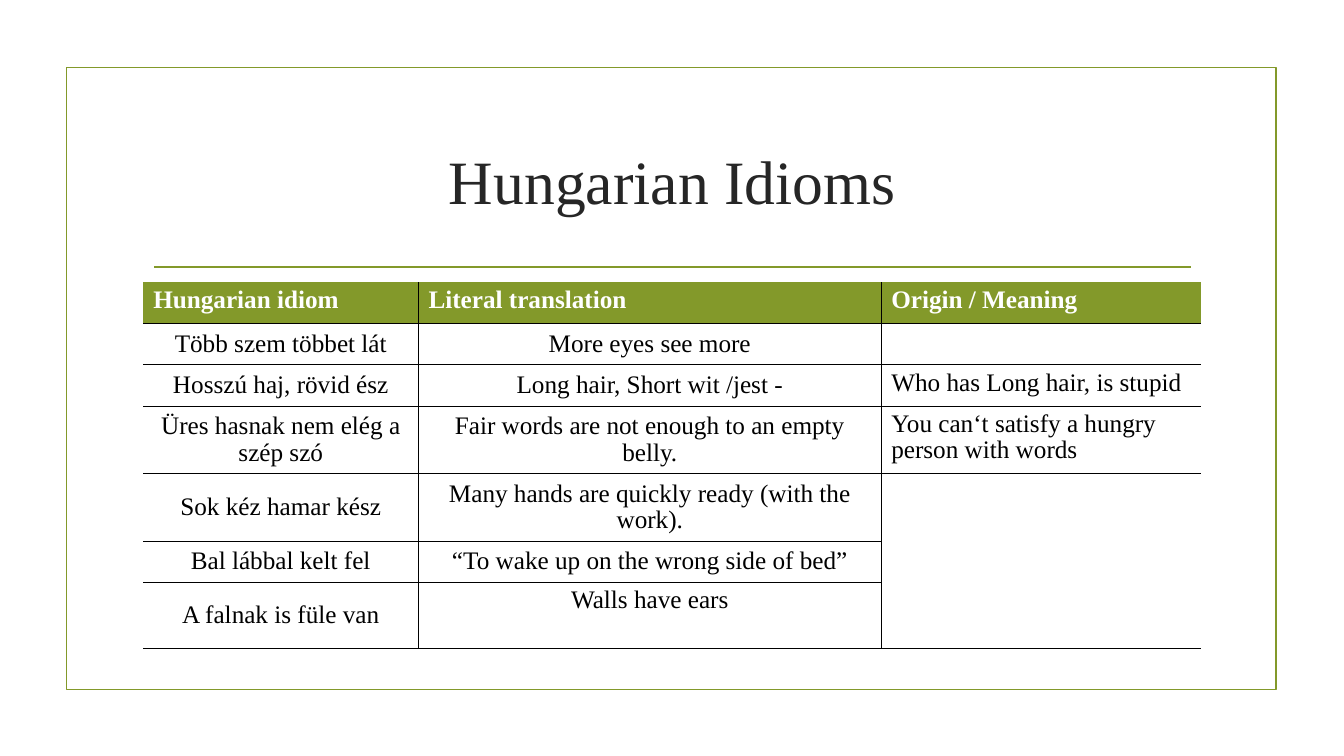
from lxml.etree import SubElement as Sub
from pptx import Presentation
from pptx.dml.color import RGBColor as Rgb
from pptx.enum.shapes import MSO_CONNECTOR as Conn, MSO_SHAPE as Shape
from pptx.enum.text import MSO_ANCHOR as Anchor, PP_ALIGN as Align
from pptx.oxml import parse_xml
from pptx.oxml.ns import nsdecls, qn
from pptx.util import Inches, Pt

HUE = {"green": "83992A", "title": "262626", "black": "000000", "white": "FFFFFF"}
FONT = "Times New Roman"
HEAD = ["Hungarian idiom", "Literal translation", "Origin / Meaning"]
ROWS = [
    ["Több szem többet lát", "More eyes see more", ""],
    ["Hosszú haj, rövid ész", "Long hair, Short wit /jest -", "Who has Long hair, is stupid"],
    ["Üres hasnak nem elég a szép szó", "Fair words are not enough to an empty belly.",
     "You can‘t satisfy a hungry person with words"],
    ["Sok kéz hamar kész", "Many hands are quickly ready (with the work).", ""],
    ["Bal lábbal kelt fel", "“To wake up on the wrong side of bed”", ""],
    ["A falnak is füle van", "Walls have ears", ""],
]
WIDE = [2.73, 4.59, 3.17]
LOW, TALL = 0.41, 0.65
HIGH = [LOW, LOW, LOW, TALL, TALL, LOW, TALL]


def write(frame, text, size=18, color="black", bold=False, align=Align.LEFT, space=None):
    para = frame.paragraphs[0]
    para.alignment = align
    para.line_spacing = space
    font = para.font
    if text:
        run = para.add_run()
        run.text = text
        font = run.font
    font.name, font.size, font.bold = FONT, Pt(size), bold
    font.color.rgb = Rgb.from_string(HUE[color])


def edge(cell, sides):
    props = cell._tc.get_or_add_tcPr()
    for spot, side in enumerate("LRTB"):
        line = parse_xml(f'<a:ln{side} {nsdecls("a")} w="{Pt(1)}"/>')
        if side in sides:
            fill = Sub(line, qn("a:solidFill"))
            Sub(fill, qn("a:srgbClr"), val=HUE["black"])
        else:
            Sub(line, qn("a:noFill"))
        props.insert(spot, line)


class Deck:
    def __init__(self):
        self.show = Presentation()
        self.show.slide_width, self.show.slide_height = Inches(13.33), Inches(7.5)
        self.slide = self.show.slides.add_slide(self.show.slide_layouts[6])
        self.color = Rgb.from_string(HUE["green"])
        self.width = Pt(1.25)

    def stroke(self, item):
        item.line.color.rgb = self.color
        item.line.width = self.width

    def frame(self, *box):
        rect = self.slide.shapes.add_shape(Shape.RECTANGLE, *map(Inches, box))
        rect.shadow.inherit = False
        rect.fill.background()
        self.stroke(rect)

    def rule(self, *ends):
        line = self.slide.shapes.add_connector(Conn.STRAIGHT, *map(Inches, ends))
        self.stroke(line)
        Sub(line._element.spPr, qn("a:effectLst"))

    def title(self, text, *box):
        frame = self.slide.shapes.add_textbox(*map(Inches, box)).text_frame
        frame.word_wrap = True
        frame.vertical_anchor = Anchor.MIDDLE
        write(frame, text, size=44, color="title", align=Align.CENTER)

    def table(self, rows, left, top):
        box = map(Inches, (left, top, sum(WIDE), sum(HIGH)))
        grid = self.slide.shapes.add_table(len(rows), len(WIDE), *box).table
        for col, wide in zip(grid.columns, WIDE):
            col.width = Inches(wide)
        for row, high in zip(grid.rows, HIGH):
            row.height = Inches(high)
        for r, texts in enumerate(rows):
            for c, text in enumerate(texts):
                self.cell(grid.cell(r, c), text, r, c)
        # The last three meanings share one empty cell
        grid.cell(4, 2).merge(grid.cell(6, 2))

    def cell(self, cell, text, r, c):
        head = r == 0
        mid = not head and c < 2
        if head:
            cell.fill.solid()
            cell.fill.fore_color.rgb = self.color
        else:
            cell.fill.background()
        edge(cell, "B" + "T" * (r > 0) + "L" * (c > 0) + "R" * (c < 2))
        if mid and text != "Walls have ears":
            cell.vertical_anchor = Anchor.MIDDLE
        write(cell.text_frame, text, color="white" if head else "black", bold=head,
              align=Align.CENTER if mid else Align.LEFT, space=0.95)


def main():
    deck = Deck()
    # Border and heading
    deck.frame(0.66, 0.67, 12, 6.17)
    deck.rule(1.53, 2.65, 11.81, 2.65)
    deck.title("Hungarian Idioms", 1.42, 1.07, 10.5, 1.43)
    # Idioms
    deck.table([HEAD] + ROWS, 1.42, 2.8)
    deck.show.save("out.pptx")


if __name__ == "__main__":
    main()
